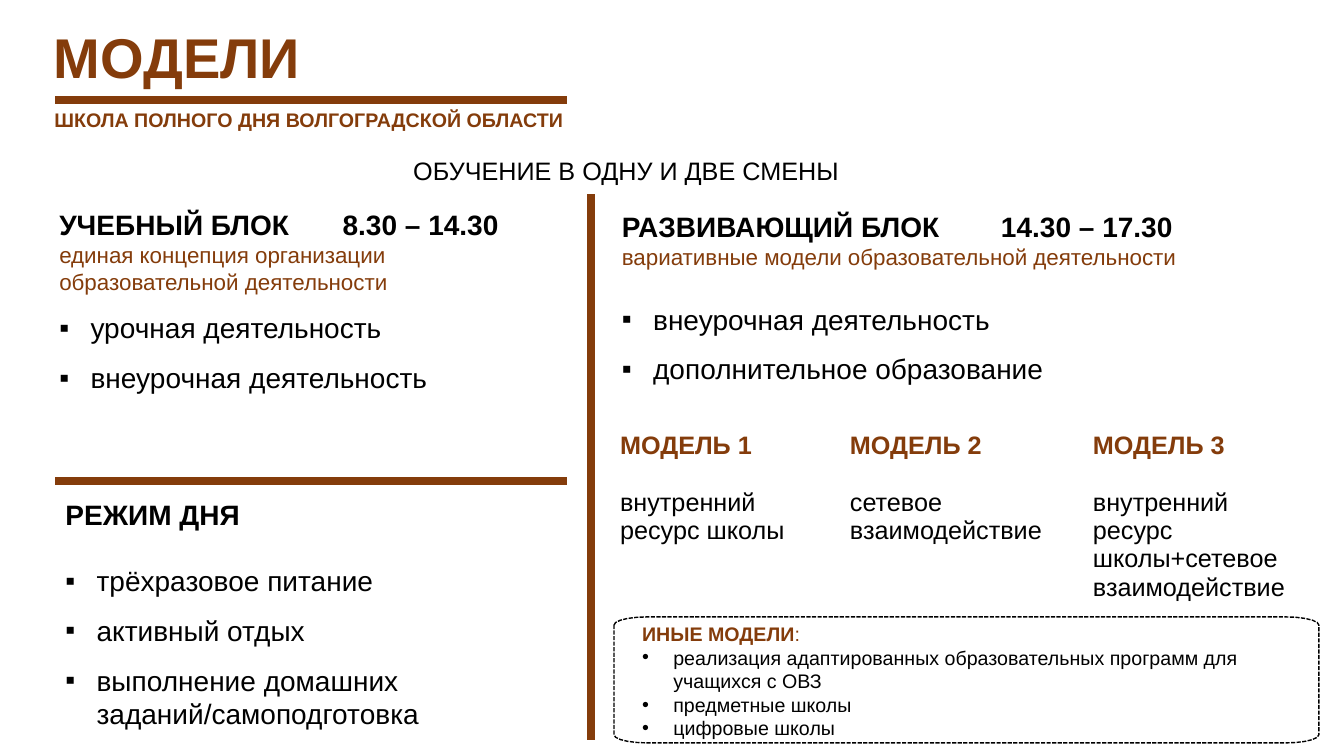
"""Build the slide on full-day school models."""
from math import cos, pi, sin

from lxml.etree import SubElement
from pptx import Presentation
from pptx.dml.color import RGBColor
from pptx.enum.dml import MSO_LINE_DASH_STYLE as Dash
from pptx.enum.shapes import MSO_CONNECTOR as Connector
from pptx.enum.text import MSO_ANCHOR as Anchor
from pptx.enum.text import MSO_AUTO_SIZE as AutoSize
from pptx.enum.text import PP_ALIGN as Align
from pptx.oxml.ns import qn
from pptx.util import Pt

PX = 9144
BROWN = RGBColor(0x84, 0x3C, 0x0B)
BLACK = RGBColor(0, 0, 0)
WHITE = RGBColor(255, 255, 255)
FONT = "Arial"
INDENT = 31


def px(*lengths):
    """Turn pixel lengths into EMU."""
    return [round(length * PX) for length in lengths]


def add_run(paragraph, text, size, color=BLACK, bold=False):
    """Append one formatted run."""
    run = paragraph.add_run()
    run.text = text
    font = run.font
    font.name, font.size, font.bold = FONT, Pt(size), bold
    font.color.rgb = color


def add_line(frame, text, size, color=BLACK, bold=False, before=0, bullet=None):
    """Append a paragraph, using the empty first one when it is free."""
    first = frame.paragraphs[0]
    paragraph = frame.add_paragraph() if first.runs else first
    paragraph.space_before = Pt(before)
    if bullet:
        props = paragraph._p.get_or_add_pPr()
        props.set("marL", str(INDENT * PX))
        props.set("indent", str(-INDENT * PX))
        SubElement(props, qn("a:buFont"), typeface=FONT)
        SubElement(props, qn("a:buChar"), char=bullet)
    add_run(paragraph, text, size, color, bold)
    return paragraph


def add_box(slide, box, wrap=True):
    """Add a text box and return its frame."""
    frame = slide.shapes.add_textbox(*px(*box)).text_frame
    frame.word_wrap = wrap
    frame.auto_size = AutoSize.SHAPE_TO_FIT_TEXT
    return frame


def add_rule(slide, x1, y1, x2, y2):
    """Draw a thick brown rule."""
    rule = slide.shapes.add_connector(Connector.STRAIGHT, *px(x1, y1, x2, y2))
    rule.line.color.rgb = BROWN
    rule.line.width = Pt(6)
    SubElement(rule._element.spPr, qn("a:effectLst"))


def add_header(slide, box):
    """Place the title, its rule and the subtitle."""
    left, top, width, height = box
    title = slide.shapes.title
    title.left, title.top, title.width, title.height = px(left, top, 267, height)
    frame = title.text_frame
    frame.auto_size = AutoSize.NONE
    frame.vertical_anchor = Anchor.MIDDLE
    heading = add_line(frame, "МОДЕЛИ", 40, BROWN, True)
    heading.alignment, heading.line_spacing = Align.CENTER, 0.9
    add_rule(slide, left + 13, top + 82, left + width, top + 82)
    subtitle = add_box(slide, (left + 2, top + 85, 529, 34), wrap=False)
    add_line(subtitle, "ШКОЛА ПОЛНОГО ДНЯ ВОЛГОГРАДСКОЙ ОБЛАСТИ", 14, BROWN, True)


def add_block(slide, box, name, items, gap, hours=None, tab=0, concept=None):
    """Place a heading, optional hours and concept, and a bulleted list."""
    frame = add_box(slide, box)
    heading = add_line(frame, name, 20, bold=True)
    if hours:
        tabs = SubElement(heading._p.get_or_add_pPr(), qn("a:tabLst"))
        SubElement(tabs, qn("a:tab"), pos=str(tab * PX), algn="l")
        add_run(heading, "\t" + hours, 20, bold=True)
    if concept:
        add_line(frame, concept, 16, BROWN)
    for index, item in enumerate(items):
        add_line(frame, item, 20, before=11.5 if index else gap, bullet="▪")


def add_models(slide, box, models, widths):
    """Place the table of models."""
    graphic = slide.shapes.add_table(1, len(models), *px(*box))
    table = graphic.table
    table.first_row = table.horz_banding = False
    for index, (name, resource) in enumerate(models):
        table.columns[index].width = px(widths[index])[0]
        cell = table.cell(0, index)
        cell.fill.solid()
        cell.fill.fore_color.rgb = WHITE
        cell.margin_top = px(34)[0]
        add_line(cell.text_frame, name, 18, BROWN, True)
        add_line(cell.text_frame, resource, 18, before=20.7)


def add_other_models(slide, box, items):
    """Place the dashed frame with the other models."""
    left, top, width, height = box
    angles = [step * pi / 10 for step in range(6)]
    corner = [(33 * (1 - cos(a)), 8 * (1 - sin(a))) for a in angles]
    upper = [(left + x, top + y) for x, y in corner]
    upper += [(left + width - x, top + y) for x, y in reversed(corner)]
    lower = [(x, 2 * top + height - y) for x, y in reversed(upper)]
    points = [px(*point) for point in upper + lower]
    builder = slide.shapes.build_freeform(*points[0], scale=1.0)
    builder.add_line_segments(points[1:], close=True)
    outline = builder.convert_to_shape()
    outline.shadow.inherit = False
    outline.fill.background()
    outline.line.color.rgb = BLACK
    outline.line.width = Pt(1)
    outline.line.dash_style = Dash.SQUARE_DOT
    frame = add_box(slide, (left + 18, top, 637, 128))
    heading = add_line(frame, "ИНЫЕ МОДЕЛИ", 14, BROWN, True)
    add_run(heading, ":", 14, BROWN)
    for item in items:
        add_line(frame, item, 14, bullet="•")


def main():
    """Assemble and save the slide."""
    deck = Presentation()
    deck.slide_width, deck.slide_height = px(1333, 750)
    slide = deck.slides.add_slide(deck.slide_layouts[5])
    add_models(slide, (605, 394, 700, 220), [
        ("МОДЕЛЬ 1", "внутренний ресурс школы"),
        ("МОДЕЛЬ 2", "сетевое взаимодействие"),
        ("МОДЕЛЬ 3", "внутренний ресурс школы+сетевое взаимодействие"),
    ], (228, 241, 231))
    add_header(slide, (42, 17, 520, 85))
    shifts = add_box(slide, (400, 149, 475, 40))
    add_line(shifts, "ОБУЧЕНИЕ В ОДНУ И ДВЕ СМЕНЫ", 18)
    add_block(slide, (49, 201, 507, 200), "УЧЕБНЫЙ БЛОК",
              ["урочная деятельность", "внеурочная деятельность"], 11.5,
              "8.30 – 14.30", 281,
              "единая концепция организации образовательной деятельности")
    add_block(slide, (607, 203, 677, 244), "РАЗВИВАЮЩИЙ БЛОК",
              ["внеурочная деятельность", "дополнительное образование"], 23,
              "14.30 – 17.30", 376,
              "вариативные модели образовательной деятельности")
    add_rule(slide, 586, 734, 586, 192)
    add_rule(slide, 55, 477, 562, 477)
    add_block(slide, (55, 489, 442, 246), "РЕЖИМ ДНЯ",
              ["трёхразовое питание", "активный отдых",
               "выполнение домашних заданий/самоподготовка"], 23)
    add_other_models(slide, (609, 612, 699, 125), [
        "реализация адаптированных образовательных программ для учащихся с ОВЗ",
        "предметные школы", "цифровые школы"])
    deck.save("out.pptx")


if __name__ == "__main__":
    main()
